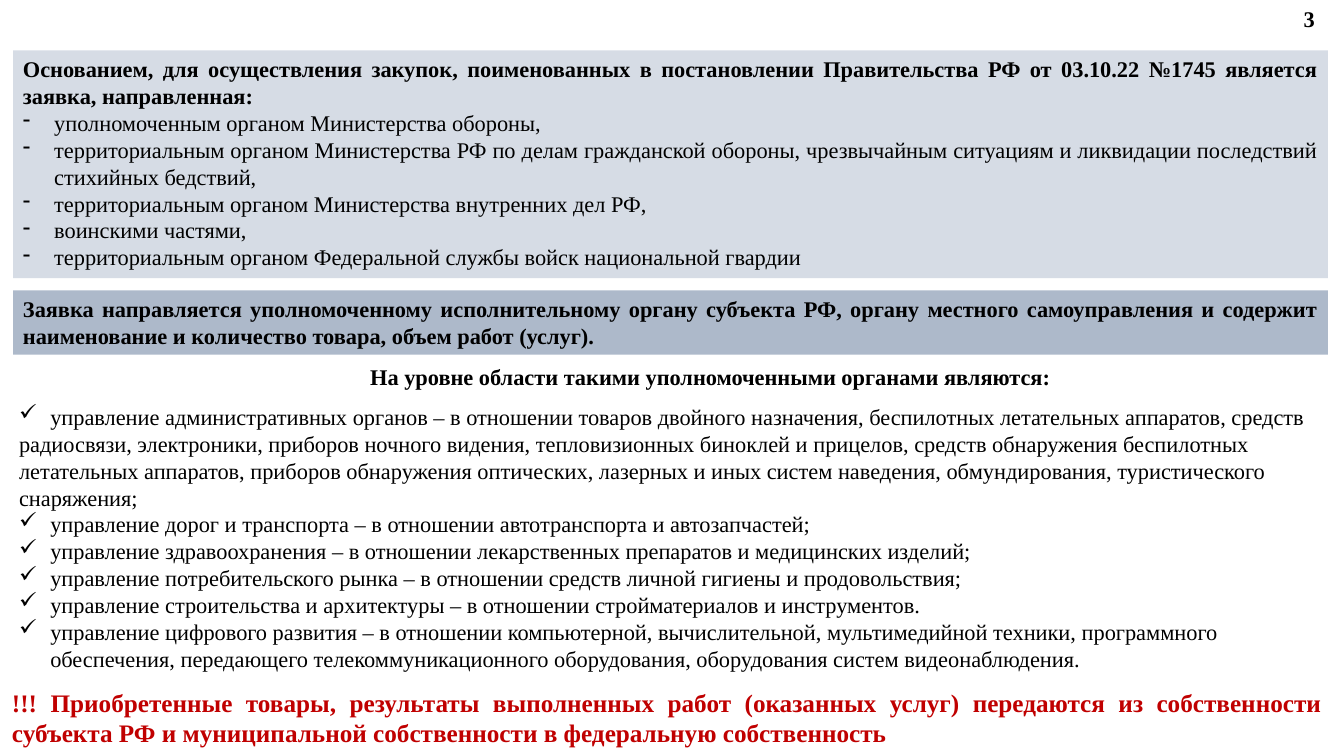
"""Build the slide on procurement requests and the bodies authorised to receive them."""
from lxml import etree
from pptx import Presentation
from pptx.dml.color import RGBColor
from pptx.enum.shapes import MSO_SHAPE
from pptx.enum.text import MSO_ANCHOR, MSO_AUTO_SIZE, PP_ALIGN as ALIGN
from pptx.oxml.ns import qn
from pptx.util import Inches, Pt

FONT = "Times New Roman"
INDENT = Inches(0.31)


def color(value):
    return RGBColor.from_string(value)


def add_block(box, lines, align, fill=None, size=16, ink="000000"):
    left, top, width, height = map(Inches, box)
    if fill:
        shape = slide.shapes.add_shape(MSO_SHAPE.RECTANGLE, left, top, width, height)
        shape.shadow.inherit = False
        shape.fill.solid()
        shape.fill.fore_color.rgb = color(fill)
        shape.line.fill.background()
    else:
        shape = slide.shapes.add_textbox(left, top, width, height)
    frame = shape.text_frame
    frame.word_wrap = True
    frame.auto_size = MSO_AUTO_SIZE.SHAPE_TO_FIT_TEXT
    frame.vertical_anchor = MSO_ANCHOR.TOP
    for index, (text, bold, bullet) in enumerate(lines):
        paragraph = frame.paragraphs[0] if index == 0 else frame.add_paragraph()
        paragraph.text = text
        paragraph.alignment = align
        if bullet:
            properties = paragraph._p.get_or_add_pPr()
            properties.set("marL", str(INDENT))
            properties.set("indent", str(-INDENT))
            etree.SubElement(properties, qn("a:buFontTx"))
            etree.SubElement(properties, qn("a:buChar")).set("char", bullet)
        font = paragraph.font
        font.name, font.size, font.bold = FONT, Pt(size), bold
        font.color.rgb = color(ink)


presentation = Presentation()
presentation.slide_width = Inches(13.33)
presentation.slide_height = Inches(7.5)
slide = presentation.slides.add_slide(presentation.slide_layouts[6])

applicants = [
    "уполномоченным органом Министерства обороны,",
    "территориальным органом Министерства РФ по делам гражданской обороны, чрезвычайным "
    "ситуациям и ликвидации последствий стихийных бедствий,",
    "территориальным органом Министерства внутренних дел РФ,",
    "воинскими частями,",
    "территориальным органом Федеральной службы войск национальной гвардии",
]
basis = (
    "Основанием, для осуществления закупок, поименованных в постановлении Правительства РФ "
    "от 03.10.22 №1745 является заявка, направленная:"
)
request = (
    "Заявка направляется уполномоченному исполнительному органу субъекта РФ, органу местного "
    "самоуправления и содержит наименование и количество товара, объем работ (услуг)."
)
warning = (
    "!!! Приобретенные товары, результаты выполненных работ (оказанных услуг) передаются из "
    "собственности субъекта РФ и муниципальной собственности в федеральную собственность"
)
departments = [
    ("управление административных органов – в отношении товаров двойного назначения, "
     "беспилотных летательных аппаратов, средств", "✓"),
    ("радиосвязи, электроники, приборов ночного видения, тепловизионных биноклей и прицелов, "
     "средств обнаружения беспилотных летательных аппаратов, приборов обнаружения оптических, "
     "лазерных и иных систем наведения, обмундирования, туристического снаряжения;", None),
    ("управление дорог и транспорта – в отношении автотранспорта и автозапчастей;", "✓"),
    ("управление здравоохранения – в отношении лекарственных препаратов и медицинских "
     "изделий;", "✓"),
    ("управление потребительского рынка – в отношении средств личной гигиены и "
     "продовольствия;", "✓"),
    ("управление строительства и архитектуры – в отношении стройматериалов и "
     "инструментов.", "✓"),
    ("управление цифрового развития – в отношении компьютерной, вычислительной, "
     "мультимедийной техники, программного обеспечения, передающего телекоммуникационного "
     "оборудования, оборудования систем видеонаблюдения.", "✓"),
]

add_block((12.83, 0, 0.41, 0.37), [("3", True, None)], ALIGN.LEFT)
add_block((0.13, 0.5, 13.04, 2.26),
          [(basis, True, None)] + [(text, False, "-") for text in applicants],
          ALIGN.JUSTIFY, fill="D6DCE5")
add_block((0.13, 2.88, 13.04, 0.64), [(request, True, None)], ALIGN.JUSTIFY, fill="ADB9CA")
add_block((2.32, 3.55, 9.45, 0.37),
          [("На уровне области такими уполномоченными органами являются:", True, None)],
          ALIGN.CENTER)
add_block((0.09, 3.95, 13.12, 2.79),
          [(text, False, bullet) for text, bullet in departments], ALIGN.LEFT)
add_block((0.02, 6.77, 13.19, 0.71), [(warning, True, None)], ALIGN.JUSTIFY,
          size=18, ink="C00000")

presentation.save("out.pptx")
